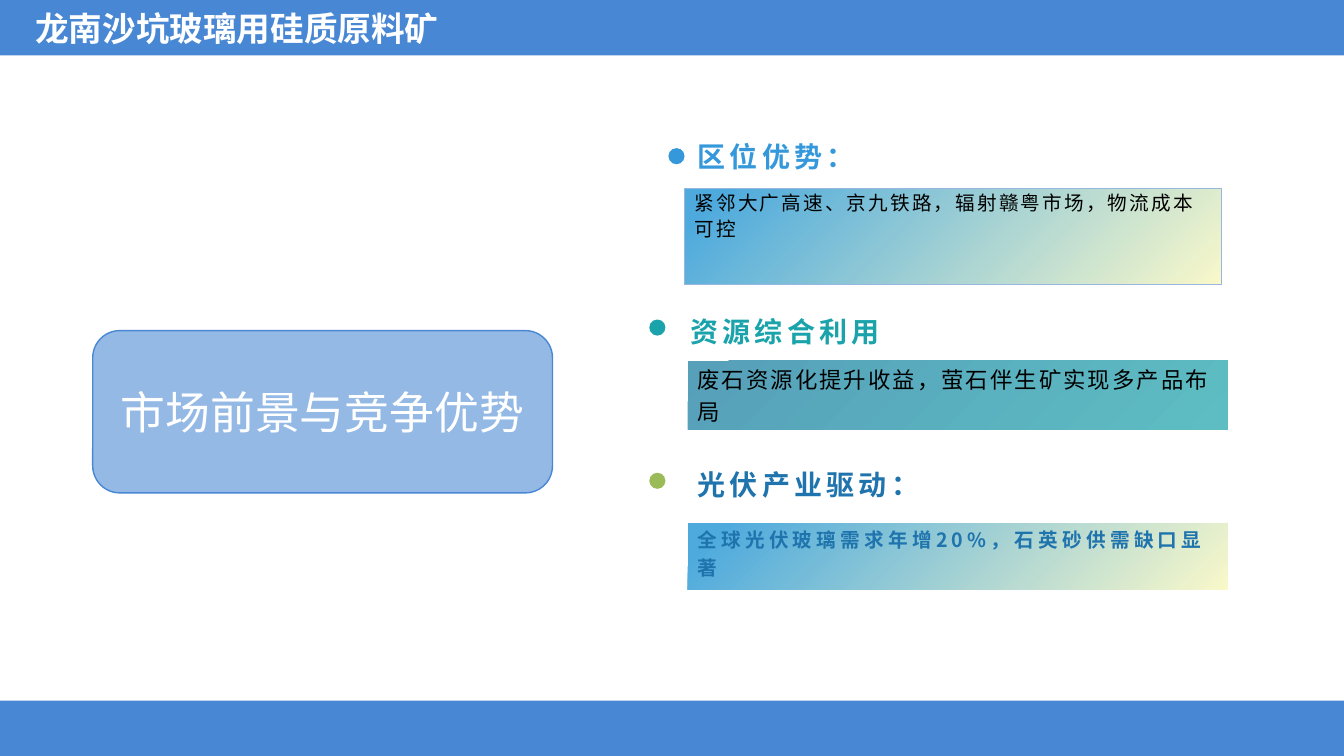
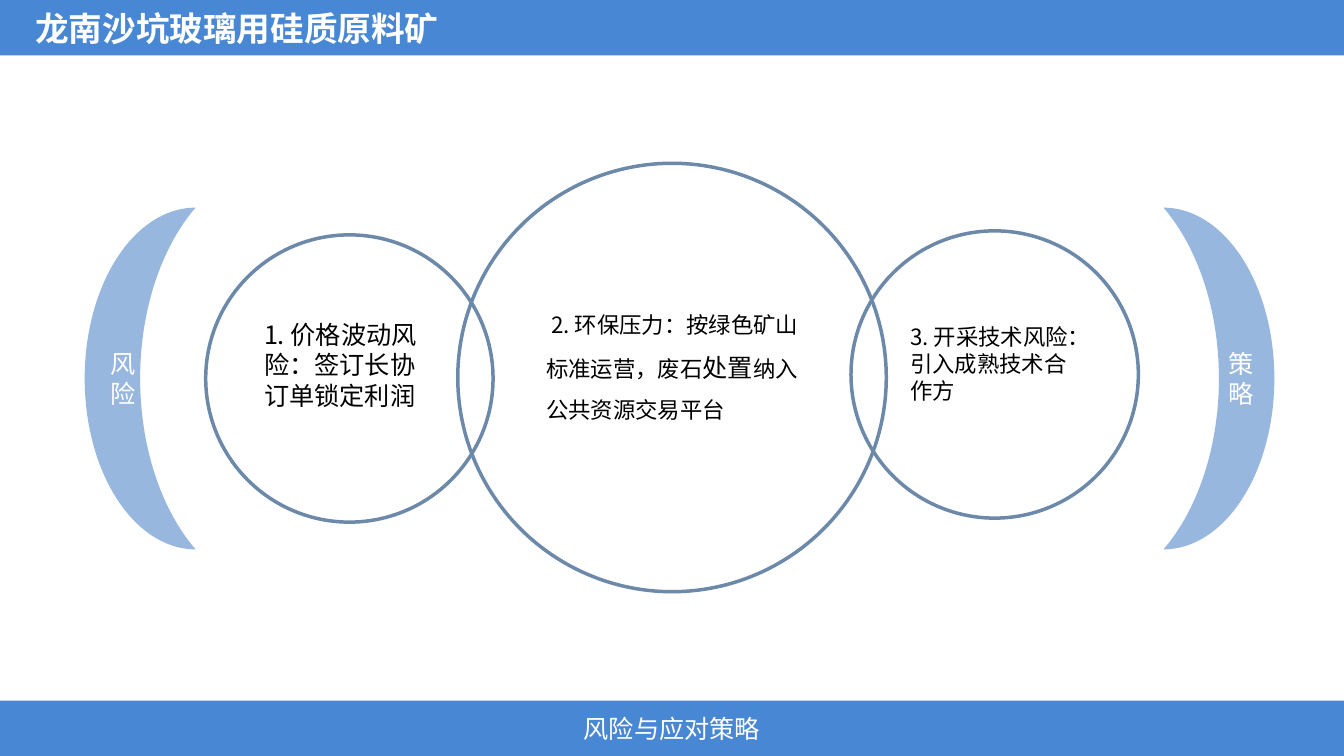
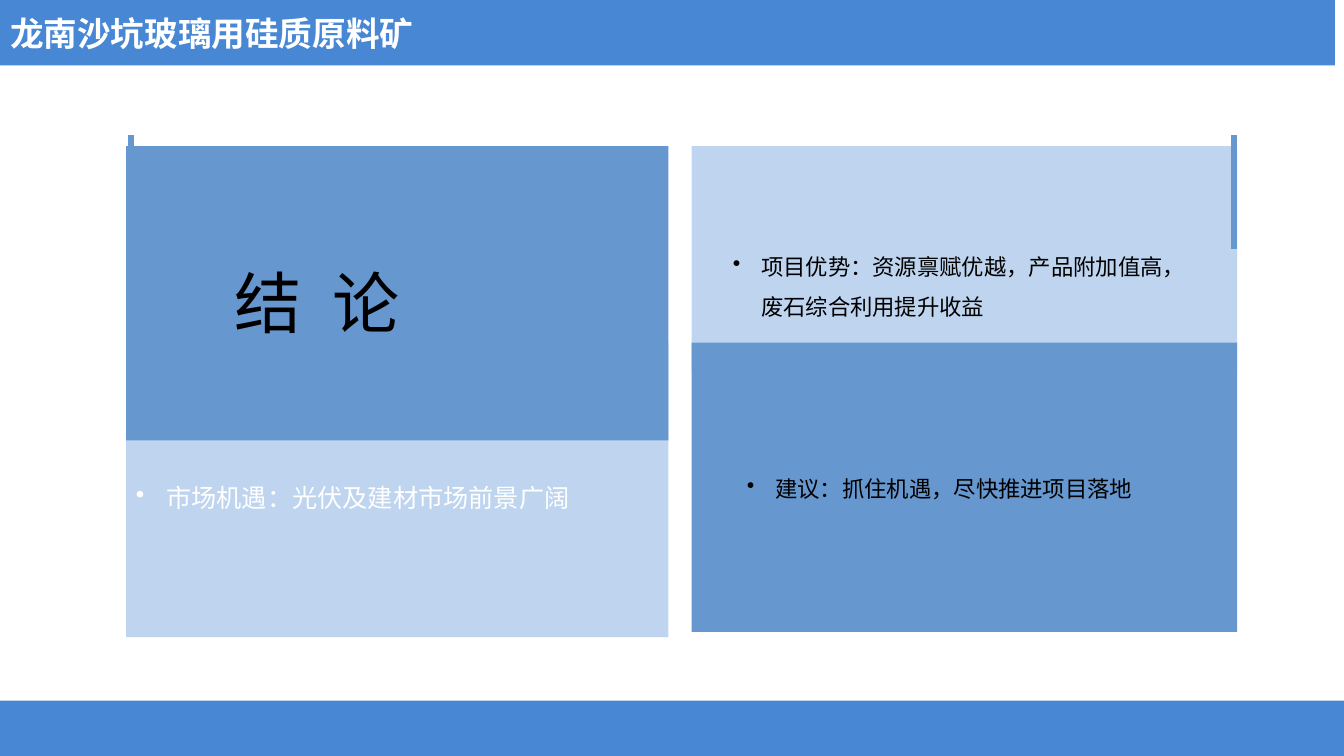
from lxml import etree
from pptx import Presentation
from pptx.dml.color import RGBColor
from pptx.enum.shapes import MSO_CONNECTOR, MSO_SHAPE
from pptx.enum.text import MSO_ANCHOR, MSO_AUTO_SIZE, PP_ALIGN
from pptx.oxml.ns import qn
from pptx.util import Inches, Pt

RECTANGLE = MSO_SHAPE.RECTANGLE
ROUNDED = MSO_SHAPE.ROUNDED_RECTANGLE
ELLIPSE = MSO_SHAPE.OVAL
MOON = MSO_SHAPE.MOON
STRAIGHT = MSO_CONNECTOR.STRAIGHT
TOP, MIDDLE, BOTTOM = MSO_ANCHOR.TOP, MSO_ANCHOR.MIDDLE, MSO_ANCHOR.BOTTOM
LEFT, CENTER = PP_ALIGN.LEFT, PP_ALIGN.CENTER
NO_AUTOFIT = MSO_AUTO_SIZE.NONE

WHITE = RGBColor(0xFF, 0xFF, 0xFF)
BLACK = RGBColor(0x00, 0x00, 0x00)
BAND_BLUE = RGBColor(0x48, 0x87, 0xD3)
SOFT_BLUE = RGBColor(0x94, 0xB9, 0xE5)
MOON_BLUE = RGBColor(0x97, 0xB7, 0xDE)
RING_BLUE = RGBColor(0x6D, 0x89, 0xA9)
PALE_BLUE = RGBColor(0xBF, 0xD5, 0xEF)
PANEL_BLUE = RGBColor(0x67, 0x97, 0xCF)
SKY = RGBColor(0x34, 0x98, 0xDB)
TEAL = RGBColor(0x1A, 0xA3, 0xAA)
GREEN = RGBColor(0x9B, 0xBB, 0x59)
DEEP_BLUE = RGBColor(0x1F, 0x74, 0xAD)
SKY_TO_CREAM = ((0.06, RGBColor(0x4E, 0xAA, 0xDD)), (1, RGBColor(0xF9, 0xF8, 0xCA)))
SLATE_TO_TEAL = ((0, RGBColor(0x56, 0xA0, 0xB9)), (1, RGBColor(0x5D, 0xBD, 0xC3)))

SANS = "Noto Sans CJK SC"
ARIAL = "Arial"
WIDTH, HEIGHT, BAND_HEIGHT = 13.33, 7.5, 0.55
TITLE = "龙南沙坑玻璃用硅质原料矿"


class Deck:
    def __init__(self):
        self.presentation = Presentation()
        self.presentation.slide_width = Inches(WIDTH)
        self.presentation.slide_height = Inches(HEIGHT)
        self.slide = None

    def new_slide(self, footer="", title_width=WIDTH, title_height=BAND_HEIGHT, title_inset=0.35):
        self.slide = self.presentation.slides.add_slide(self.presentation.slide_layouts[5])
        title = self.slide.shapes.title
        title.left, title.top = Inches(0), Inches(0)
        title.width, title.height = Inches(title_width), Inches(title_height)
        title.fill.solid()
        title.fill.fore_color.rgb = BAND_BLUE
        self.label(title, TITLE, 24, WHITE, ARIAL, bold=True, anchor=MIDDLE,
                   insets=(title_inset, 0, 0.1, 0))
        band = self.shape(RECTANGLE, 0, HEIGHT - BAND_HEIGHT, WIDTH, BAND_HEIGHT, BAND_BLUE)
        if footer:
            self.label(band, footer, 18, WHITE, align=CENTER, anchor=MIDDLE)

    def shape(self, kind, left, top, width, height, fill=None, line=None, line_width=1, flip=False):
        shape = self.slide.shapes.add_shape(
            kind, Inches(left), Inches(top), Inches(width), Inches(height))
        shape.shadow.inherit = False
        if fill is None:
            shape.fill.background()
        elif isinstance(fill, RGBColor):
            shape.fill.solid()
            shape.fill.fore_color.rgb = fill
        else:
            shape.fill.gradient()
            shape.fill.gradient_angle = 315
            for stop, (position, color) in zip(shape.fill.gradient_stops, fill):
                stop.position = position
                stop.color.rgb = color
        if line is None:
            shape.line.fill.background()
        else:
            shape.line.color.rgb = line
            shape.line.width = Pt(line_width)
        if flip:
            shape.element.spPr.get_or_add_xfrm().set("flipH", "1")
        return shape

    def text(self, left, top, width, height, content, size, color, font=SANS, **style):
        box = self.slide.shapes.add_textbox(
            Inches(left), Inches(top), Inches(width), Inches(height))
        self.label(box, content, size, color, font, **style)

    def label(self, shape, content, size, color, font=SANS, bold=False, align=LEFT, anchor=TOP,
              line_spacing=1.0, tracking=0, insets=(0.1, 0.05, 0.1, 0.05), bullet=0):
        frame = shape.text_frame
        frame.word_wrap = True
        frame.auto_size = NO_AUTOFIT
        frame.vertical_anchor = anchor
        (frame.margin_left, frame.margin_top,
         frame.margin_right, frame.margin_bottom) = map(Inches, insets)
        paragraph = frame.paragraphs[0]
        paragraph.alignment = align
        paragraph.line_spacing = line_spacing
        if bullet:
            properties = paragraph._p.get_or_add_pPr()
            properties.set("marL", str(Inches(bullet)))
            properties.set("indent", str(-Inches(bullet)))
            etree.SubElement(properties, qn("a:buChar")).set("char", "•")
        runs = [(content, size)] if isinstance(content, str) else content
        for words, run_size in runs:
            run = paragraph.add_run()
            run.text = words
            run.font.size = Pt(run_size)
            run.font.bold = bold
            run.font.color.rgb = color
            run.font.name = font
            properties = run._r.get_or_add_rPr()
            etree.SubElement(properties, qn("a:ea")).set("typeface", SANS)
            if tracking:
                properties.set("spc", str(int(tracking * 100)))

    def line(self, start, end, color, width):
        connector = self.slide.shapes.add_connector(STRAIGHT, *map(Inches, start + end))
        connector.line.color.rgb = color
        connector.line.width = Pt(width)
        etree.SubElement(connector.element.spPr, qn("a:effectLst"))

    def dot(self, left, top, color):
        self.shape(ELLIPSE, left, top, 0.16, 0.16, color)

    def heading(self, left, bottom, content, color):
        self.text(left, bottom - 0.49, 5.36, 0.49, content, 20, color, bold=True, anchor=BOTTOM,
                  line_spacing=1.3, tracking=3, insets=(0.1, 0.05, 0.1, 0))

    def detail(self, left, top, width, height, fill, content, size, color=BLACK, line=None,
               bold=False, line_spacing=1.2, tracking=1.5):
        box = self.shape(RECTANGLE, left, top, width, height, fill, line, 0.75)
        self.label(box, content, size, color, bold=bold, line_spacing=line_spacing,
                   tracking=tracking, insets=(0.1, 0, 0.1, 0.05))


def market_slide(deck):
    deck.new_slide()
    for left, top, color in ((6.63, 1.47, SKY), (6.44, 3.17, TEAL), (6.44, 4.69, GREEN)):
        deck.dot(left, top, color)
    for left, bottom, content, color in (
            (6.82, 1.72, "区位优势：", SKY),
            (6.75, 3.45, "资源综合利用", TEAL),
            (6.82, 4.97, "光伏产业驱动：", DEEP_BLUE)):
        deck.heading(left, bottom, content, color)
    deck.detail(6.79, 1.87, 5.33, 0.95, SKY_TO_CREAM,
                "紧邻大广高速、京九铁路，辐射赣粤市场，物流成本可控", 14,
                line=MOON_BLUE, line_spacing=1.1)
    deck.detail(6.82, 3.58, 5.36, 0.68, SLATE_TO_TEAL,
                "废石资源化提升收益，萤石伴生矿实现多产品布局", 16)
    deck.detail(6.82, 5.19, 5.36, 0.66, SKY_TO_CREAM,
                "全球光伏玻璃需求年增20%，石英砂供需缺口显著", 14, DEEP_BLUE,
                bold=True, tracking=3)
    topic = deck.shape(ROUNDED, 0.92, 3.28, 4.56, 1.61, SOFT_BLUE, BAND_BLUE)
    deck.label(topic, "市场前景与竞争优势", 32, WHITE, ARIAL, align=CENTER, anchor=MIDDLE)


def risk_slide(deck):
    deck.new_slide(footer="风险与应对策略")
    for left, top, diameter in ((4.54, 1.62, 4.25), (2.04, 2.33, 2.85), (8.44, 2.29, 2.85)):
        deck.shape(ELLIPSE, left, top, diameter, diameter, line=RING_BLUE, line_width=2.5)
    deck.text(2.52, 3.12, 1.89, 1.01, "1. 价格波动风险：签订长协订单锁定利润", 18, BLACK)
    deck.text(5.32, 2.9, 2.72, 1.97,
              [(" 2. 环保压力：按绿色矿山标准运营，废石", 16), ("处置", 18),
               ("纳入公共资源交易平台", 16)], 16, BLACK, line_spacing=1.5)
    deck.text(8.93, 3.16, 1.89, 0.91, "3. 开采技术风险：引入成熟技术合作方", 16, BLACK)
    for left, side, flip in ((0.84, "风险", False), (11.54, "策略", True)):
        moon = deck.shape(MOON, left, 2.06, 1.1, 3.39, MOON_BLUE, flip=flip)
        deck.label(moon, side, 18, WHITE, align=CENTER, anchor=MIDDLE)


def conclusion_slide(deck):
    deck.new_slide(title_width=13.24, title_height=0.65, title_inset=0.1)
    opportunity = deck.shape(RECTANGLE, 1.25, 3.4, 5.38, 2.92, PALE_BLUE)
    deck.label(opportunity, "市场机遇：光伏及建材市场前景广阔", 18, WHITE, ARIAL,
               anchor=MIDDLE, line_spacing=1.5, bullet=0.3)
    for left, top, width, height, fill in (
            (6.86, 1.45, 5.41, 2.25, PALE_BLUE),
            (1.25, 1.45, 5.38, 2.92, PANEL_BLUE),
            (6.86, 3.4, 5.41, 2.87, PANEL_BLUE)):
        deck.shape(RECTANGLE, left, top, width, height, fill)
    for left, top, width, height, content in (
            (7.17, 2.33, 4.58, 1.8, "项目优势：资源禀赋优越，产品附加值高，废石综合利用提升收益"),
            (7.31, 4.53, 4.5, 1.39, "建议：抓住机遇，尽快推进项目落地")):
        deck.text(left, top, width, height, content, 16, BLACK, ARIAL,
                  line_spacing=1.5, bullet=0.28)
    for x in (1.3, 12.24):
        deck.line((x, 1.34), (x, 2.47), PANEL_BLUE, 4)
    deck.text(2.23, 2.14, 3.98, 1.91, "结 论", 48, BLACK, line_spacing=1.5, tracking=5.4)


def main():
    deck = Deck()
    market_slide(deck)
    risk_slide(deck)
    conclusion_slide(deck)
    deck.presentation.save("out.pptx")


if __name__ == "__main__":
    main()
